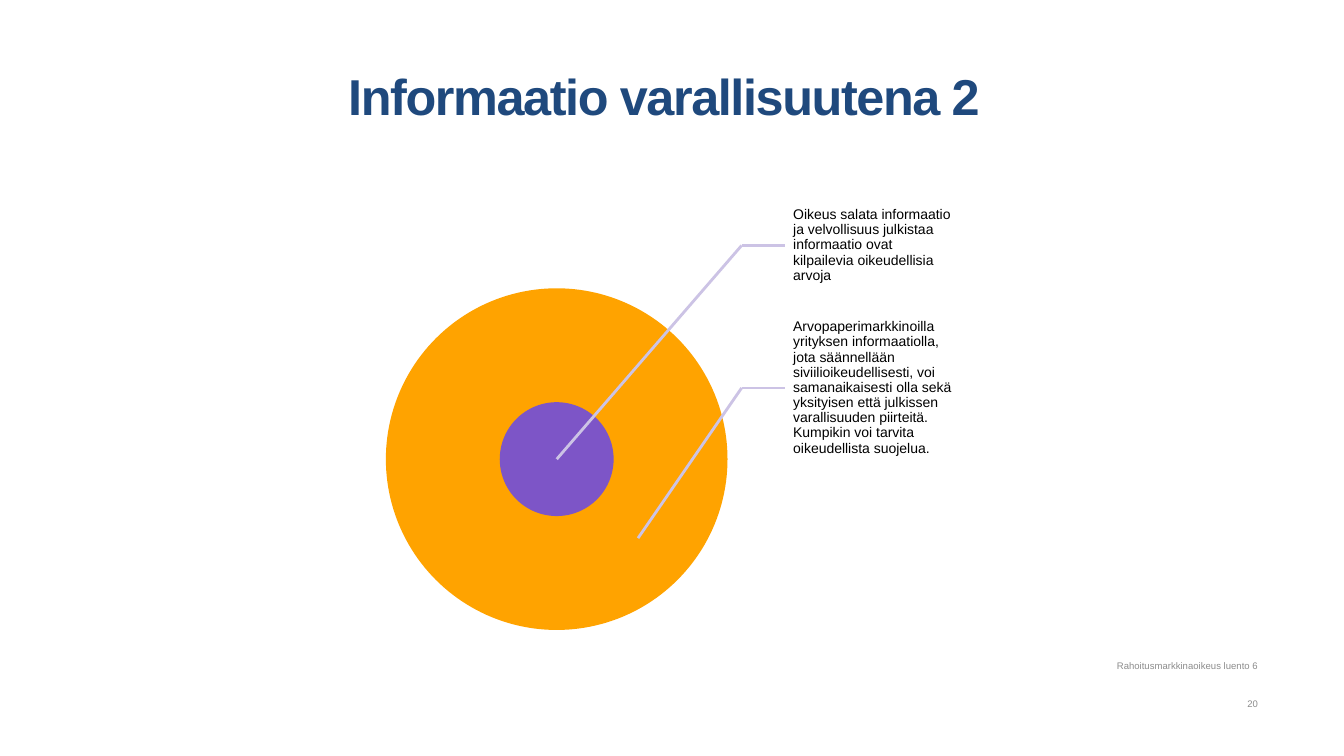
import pptx
import pptx.dml.color
import pptx.enum.shapes
import pptx.enum.text
import pptx.oxml.ns
import pptx.util
from lxml import etree

Cm = pptx.util.Cm
Pt = pptx.util.Pt
ALIGN = pptx.enum.text.PP_ALIGN
ANCHOR = pptx.enum.text.MSO_ANCHOR


def color(hex_value):
    return pptx.dml.color.RGBColor.from_string(hex_value)


class SlideBuilder:
    font = "Arial"
    navy, gray, black = "1F497D", "8C8C8C", "000000"
    orange, purple, lilac = "FFA300", "7D55C7", "CCC3E5"

    def __init__(self, slide):
        self.slide = slide

    def text(self, words, box, size, ink, align=ALIGN.LEFT, anchor=ANCHOR.MIDDLE,
             insets=(0.25, 0.13, 0, 0.13), bold=False, tracking=None, line_spacing=None):
        frame = self.slide.shapes.add_textbox(*map(Cm, box)).text_frame
        frame.text = words
        frame.word_wrap = True
        frame.vertical_anchor = anchor
        (frame.margin_left, frame.margin_top,
         frame.margin_right, frame.margin_bottom) = map(Cm, insets)
        paragraph = frame.paragraphs[0]
        paragraph.alignment = align
        if line_spacing:
            paragraph.line_spacing = line_spacing
        run = paragraph.runs[0]
        run.font.name, run.font.size, run.font.bold = self.font, Pt(size), bold
        run.font.color.rgb = color(ink)
        if tracking:
            run.font._element.set("spc", str(tracking))

    def circle(self, center, diameter, fill):
        left, top = (c - diameter / 2 for c in center)
        disc = self.slide.shapes.add_shape(
            pptx.enum.shapes.MSO_SHAPE.OVAL, Cm(left), Cm(top), Cm(diameter), Cm(diameter))
        disc.shadow.inherit = False
        disc.fill.solid()
        disc.fill.fore_color.rgb = color(fill)
        disc.line.fill.background()

    def line(self, start, end):
        leader = self.slide.shapes.add_connector(
            pptx.enum.shapes.MSO_CONNECTOR.STRAIGHT, *map(Cm, (*start, *end)))
        leader.line.color.rgb = color(self.lilac)
        leader.line.width = Pt(2)
        etree.SubElement(leader._element.spPr, pptx.oxml.ns.qn("a:effectLst"))

    def callout(self, words, top, target):
        left, width, height, elbow_x = 19.79, 4.32, 3.59, 18.69
        self.text(words, (left, top, width, height), 10, self.black,
                  insets=(0.2, 0.03, 0.03, 0.03), line_spacing=0.9)
        elbow = (elbow_x, top + height / 2)
        self.line(elbow, (left, elbow[1]))
        self.line(elbow, target)


def main():
    deck = pptx.Presentation()
    deck.slide_width, deck.slide_height = Cm(33.87), Cm(19.05)
    page = SlideBuilder(deck.slides.add_slide(deck.slide_layouts[6]))

    # Title
    page.text("Informaatio varallisuutena 2 ", (2.11, 1.35, 29.57, 3), 36, page.navy,
              align=ALIGN.CENTER, anchor=ANCHOR.TOP, insets=(0.25, 0.3, 0.25, 0.13),
              bold=True, tracking=-100)

    # Footer and slide number
    for words, top in (("Rahoitusmarkkinaoikeus luento 6", 16.54), ("20", 17.5)):
        page.text(words, (18.29, top, 13.41, 0.45), 6.8, page.gray, align=ALIGN.RIGHT)

    # Target: the inner circle is a third of the outer one
    center, diameter = (14.03, 11.57), 8.61
    page.circle(center, diameter, page.orange)
    page.circle(center, diameter / 3, page.purple)

    # Callouts
    page.callout("Oikeus salata informaatio ja velvollisuus julkistaa informaatio ovat "
                 "kilpailevia oikeudellisia arvoja", 4.39, center)
    page.callout("Arvopaperimarkkinoilla yrityksen informaatiolla, jota säännellään "
                 "siviilioikeudellisesti, voi samanaikaisesti olla sekä yksityisen että "
                 "julkissen varallisuuden piirteitä. Kumpikin voi tarvita oikeudellista "
                 "suojelua.", 7.98, (16.08, 13.56))

    deck.save("out.pptx")


if __name__ == "__main__":
    main()
